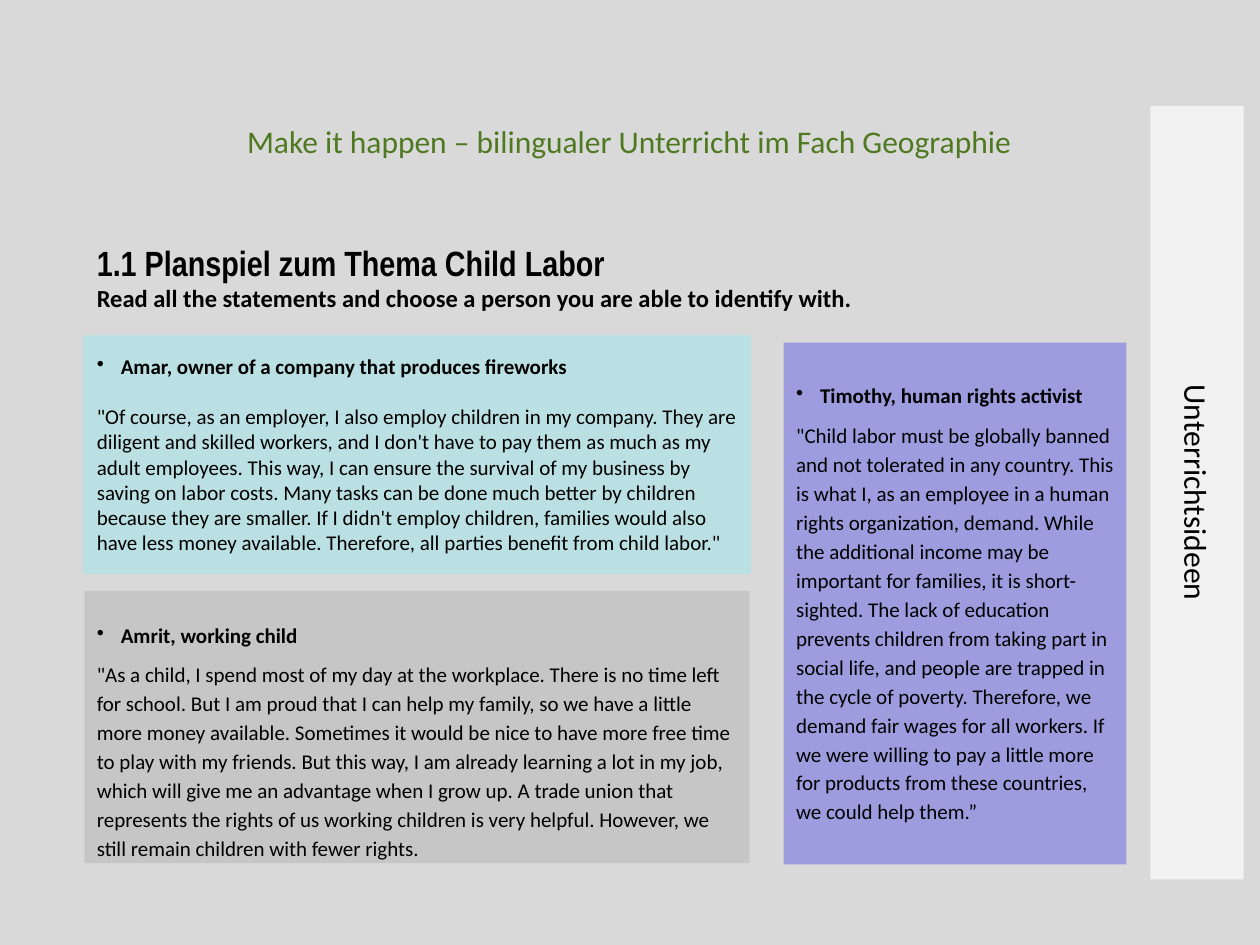
from lxml.etree import SubElement
from pptx import Presentation
from pptx.dml.color import RGBColor
from pptx.enum.shapes import MSO_SHAPE
from pptx.enum.text import MSO_ANCHOR, PP_ALIGN
from pptx.oxml.ns import qn
from pptx.util import Inches, Pt

COLORS = {
    "background": "D9D9D9", "sidebar": "F2F2F2", "heading": "4F7921", "text": "000000",
    "amar": "BBE0E3", "amrit": "C6C6C6", "timothy": "9C9CDF",
}

deck = Presentation()
deck.slide_width, deck.slide_height = Inches(10), Inches(7.5)
slide = deck.slides.add_slide(deck.slide_layouts[6])
slide.background.fill.solid()
slide.background.fill.fore_color.rgb = RGBColor.from_string(COLORS["background"])

# Grid of 100 columns by 75 rows
COL, ROW = deck.slide_width / 100, deck.slide_height / 75


def add_box(left, top, width, height, fill=None, line=None, anchor=MSO_ANCHOR.TOP):
    place = [int(left * COL), int(top * ROW), int(width * COL), int(height * ROW)]
    if fill is None:
        box = slide.shapes.add_textbox(*place)
    else:
        box = slide.shapes.add_shape(MSO_SHAPE.RECTANGLE, *place)
        box.shadow.inherit = False
        box.fill.solid()
        box.fill.fore_color.rgb = RGBColor.from_string(COLORS[fill])
        if line:
            box.line.color.rgb = RGBColor.from_string(COLORS[line])
            box.line.width = Pt(2)
        else:
            box.line.fill.background()
    box.text_frame.word_wrap = True
    box.text_frame.vertical_anchor = anchor
    return box.text_frame


def add_text(frame, text, size=12, font="Calibri", color="text", bold=False,
             align=PP_ALIGN.LEFT, bullet=False, spacing=None, before=0, after=0):
    paragraph = frame.paragraphs[0]
    if paragraph.runs:
        paragraph = frame.add_paragraph()
    if bullet:
        properties = paragraph._p.get_or_add_pPr()
        properties.set("marL", str(Inches(0.19)))
        properties.set("indent", str(-Inches(0.19)))
        SubElement(properties, qn("a:buChar")).set("char", "•")
    paragraph.alignment = align
    paragraph.line_spacing = spacing
    if before:
        paragraph.space_before = Pt(before)
    if after:
        paragraph.space_after = Pt(after)
    run = paragraph.add_run()
    run.text = text
    run.font.size, run.font.name, run.font.bold = Pt(size), font, bold
    run.font.color.rgb = RGBColor.from_string(COLORS[color])


# Sidebar with vertical label
sidebar = add_box(91.3, 8.4, 7.4, 61.4, fill="sidebar", anchor=MSO_ANCHOR.MIDDLE)
sidebar._txBody.bodyPr.set("vert", "vert")
add_text(sidebar, "Unterrichtsideen", size=18, align=PP_ALIGN.CENTER)

# Heading, title and task
add_text(add_box(5.3, 9.2, 89.3, 4), "Make it happen – bilingualer Unterricht im Fach Geographie",
         size=18, color="heading", align=PP_ALIGN.CENTER)
add_text(add_box(6.7, 17, 50, 5.4), "1.1 Planspiel zum Thema Child Labor",
         size=20, font="Arial Narrow", bold=True, spacing=1.5)
add_text(add_box(6.7, 22, 82.6, 4.7),
         "Read all the statements and choose a person you are able to identify with.",
         size=14, bold=True)

# Statement cards
amar = add_box(6.7, 26.7, 52.8, 18.7, fill="amar", line="amar", anchor=MSO_ANCHOR.MIDDLE)
amrit = add_box(6.7, 46.9, 52.8, 21.6, fill="amrit")
amrit.margin_top = int(2.5 * ROW)
timothy = add_box(62.2, 27.2, 27.2, 41.4, fill="timothy", anchor=MSO_ANCHOR.MIDDLE)

airy = {"spacing": 1.15, "before": 6, "after": 6}
statements = [
    (amar, "Amar, owner of a company that produces fireworks",
     "\"Of course, as an employer, I also employ children in my company. They are diligent and "
     "skilled workers, and I don't have to pay them as much as my adult employees. This way, I can "
     "ensure the survival of my business by saving on labor costs. Many tasks can be done much "
     "better by children because they are smaller. If I didn't employ children, families would "
     "also have less money available. Therefore, all parties benefit from child labor.\"",
     {"before": 14.4}),
    (amrit, "Amrit, working child",
     "\"As a child, I spend most of my day at the workplace. There is no time left for school. But "
     "I am proud that I can help my family, so we have a little more money available. Sometimes it "
     "would be nice to have more free time to play with my friends. But this way, I am already "
     "learning a lot in my job, which will give me an advantage when I grow up. A trade union that "
     "represents the rights of us working children is very helpful. However, we still remain "
     "children with fewer rights.",
     airy),
    (timothy, "Timothy, human rights activist",
     "\"Child labor must be globally banned and not tolerated in any country. This is what I, as "
     "an employee in a human rights organization, demand. While the additional income may be "
     "important for families, it is short-sighted. The lack of education prevents children from "
     "taking part in social life, and people are trapped in the cycle of poverty. Therefore, we "
     "demand fair wages for all workers. If we were willing to pay a little more for products from "
     "these countries, we could help them.”",
     airy),
]
for card, speaker, quote, quote_format in statements:
    add_text(card, speaker, bold=True, bullet=True)
    add_text(card, quote, **quote_format)

deck.save("out.pptx")
